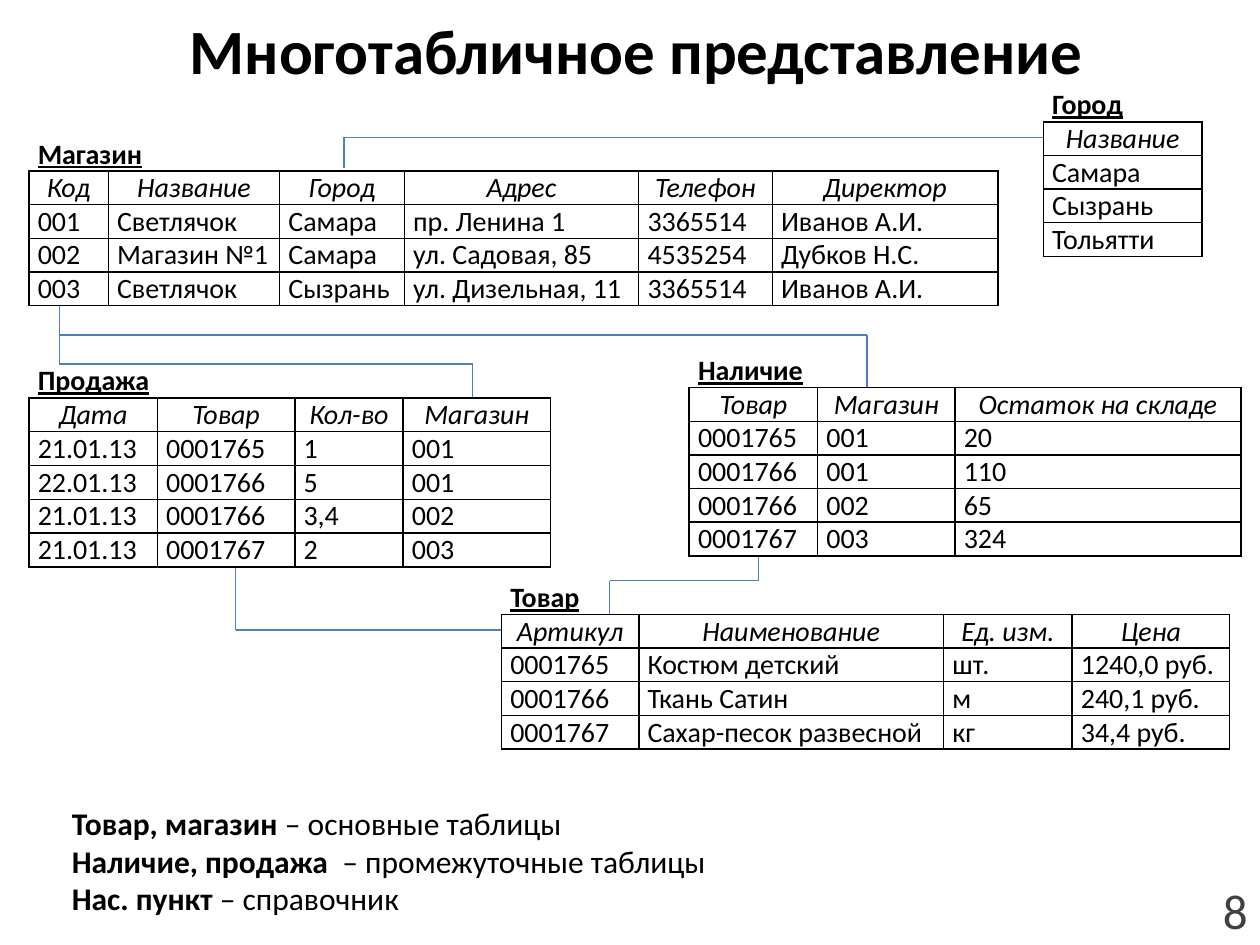
"""Build a slide that shows how the tables of a shop database are linked."""
from dataclasses import dataclass
from itertools import pairwise

import pptx
import pptx.dml.color
import pptx.enum.shapes
import pptx.enum.text
import pptx.oxml.ns
import pptx.util
from lxml import etree

Inches = pptx.util.Inches
Pt = pptx.util.Pt
Align = pptx.enum.text.PP_ALIGN
AutoSize = pptx.enum.text.MSO_AUTO_SIZE
qualified = pptx.oxml.ns.qn


@dataclass(frozen=True)
class Theme:
    font: str = "Calibri"
    ink: str = "000000"
    paper: str = "FFFFFF"
    number: str = "404040"
    link: str = "4F81BD"
    link_dark: str = "4B7EBC"
    title_size: int = 36
    number_size: int = 28
    body_size: int = 18
    table_size: int = 16
    border_width: float = 1
    link_width: float = 0.75


@dataclass(frozen=True)
class DataTable:
    name: str
    left: float
    top: float
    height: float
    widths: tuple[float, ...]
    rows: tuple[tuple[str, ...], ...]
    title_span: int
    alignment: Align = Align.JUSTIFY


@dataclass(frozen=True)
class Link:
    points: tuple[tuple[float, float], ...]
    color: str


THEME = Theme()

LINKS = (
    Link(((0.47, 2.42), (0.47, 2.89), (3.75, 2.89), (3.75, 3.2)), THEME.link),
    Link(((1.87, 4.45), (1.87, 5), (3.98, 5)), THEME.link),
    Link(((2.73, 1.33), (2.73, 1.09), (8.28, 1.09)), THEME.link),
    Link(((4.84, 4.92), (4.84, 4.61), (6.02, 4.61), (6.02, 4.38)), THEME.link_dark),
    Link(((6.88, 3.12), (6.88, 2.66), (0.47, 2.66)), THEME.link_dark),
)

TABLES = (
    DataTable("Товар", 3.98, 4.61, 1.33, (1.09, 2.42, 1.02, 1.25), (
        ("Артикул", "Наименование", "Ед. изм.", "Цена"),
        ("0001765", "Костюм детский", "шт.", "1240,0 руб."),
        ("0001766", "Ткань Сатин", "м", "240,1 руб."),
        ("0001767", "Сахар-песок развесной", "кг", "34,4 руб."),
    ), 4),
    DataTable("Продажа", 0.23, 2.89, 1.61, (1.02, 1.09, 0.86, 1.17), (
        ("Дата", "Товар", "Кол-во", "Магазин"),
        ("21.01.13", "0001765", "1", "001"),
        ("22.01.13", "0001766", "5", "001"),
        ("21.01.13", "0001766", "3,4", "002"),
        ("21.01.13", "0001767", "2", "003"),
    ), 4),
    DataTable("Наличие", 5.47, 2.81, 1.6, (1.02, 1.09, 2.27), (
        ("Товар", "Магазин", "Остаток на складе"),
        ("0001765", "001", "20"),
        ("0001766", "001", "110"),
        ("0001766", "002", "65"),
        ("0001767", "003", "324"),
    ), 2),
    DataTable("Магазин", 0.23, 1.09, 1.33, (0.63, 1.36, 0.99, 1.86, 1.06, 1.79), (
        ("Код", "Название", "Город", "Адрес", "Телефон", "Директор"),
        ("001", "Светлячок", "Самара", "пр. Ленина 1", "3365514", "Иванов А.И."),
        ("002", "Магазин №1", "Самара", "ул. Садовая, 85", "4535254", "Дубков Н.С."),
        ("003", "Светлячок", "Сызрань", "ул. Дизельная, 11", "3365514", "Иванов А.И."),
    ), 6, Align.LEFT),
    DataTable("Город", 8.28, 0.7, 1.33, (1.26,), (
        ("Название",), ("Самара",), ("Сызрань",), ("Тольятти",),
    ), 1),
)

TABLE_ROLES = (
    ("Товар, магазин ", "– основные таблицы"),
    ("Наличие, продажа  ", "– промежуточные таблицы"),
    ("Нас. пункт ", "– справочник"),
)


def rgb(color: str) -> pptx.dml.color.RGBColor:
    """Turn a hex string into a colour."""
    return pptx.dml.color.RGBColor.from_string(color)


def place(shape, left: float, top: float, width: float, height: float) -> None:
    """Move and size a shape, in inches."""
    shape.left, shape.top = Inches(left), Inches(top)
    shape.width, shape.height = Inches(width), Inches(height)


def add_run(paragraph, text: str, size: int, color: str = THEME.ink,
            bold: bool = False, italic: bool = False, underline: bool = False) -> None:
    """Add one formatted run to a paragraph."""
    run = paragraph.add_run()
    run.text = text
    font = run.font
    font.name, font.size = THEME.font, Pt(size)
    font.bold, font.italic, font.underline = bold, italic, underline
    font.color.rgb = rgb(color)


def add_title(slide) -> None:
    """Fill the title placeholder."""
    title = slide.shapes.title
    place(title, 0.55, 0, 9, 0.78)
    paragraph = title.text_frame.paragraphs[0]
    paragraph.alignment = Align.CENTER
    add_run(paragraph, "Многотабличное представление", THEME.title_size, bold=True)


def add_slide_number(slide) -> None:
    """Put the slide number in the bottom right corner."""
    box = slide.shapes.add_textbox(Inches(9.14), Inches(6.95), Inches(0.86), Inches(0.55))
    frame = box.text_frame
    frame.word_wrap = True
    frame.vertical_anchor = pptx.enum.text.MSO_ANCHOR.MIDDLE
    frame.paragraphs[0].alignment = Align.RIGHT
    add_run(frame.paragraphs[0], "8", THEME.number_size, THEME.number)


def add_table_roles(slide) -> None:
    """Fill the body placeholder with the roles of the tables."""
    body = slide.placeholders[1]
    place(body, 0.47, 6.33, 9.06, 1.01)
    frame = body.text_frame
    frame.auto_size = AutoSize.SHAPE_TO_FIT_TEXT
    for index, (names, role) in enumerate(TABLE_ROLES):
        paragraph = frame.add_paragraph() if index else frame.paragraphs[0]
        paragraph.space_before = Pt(0)
        properties = paragraph._p.get_or_add_pPr()
        properties.set("marL", "0")
        properties.set("indent", "0")
        etree.SubElement(properties, qualified("a:buNone"))
        add_run(paragraph, names, THEME.body_size, bold=True)
        add_run(paragraph, role, THEME.body_size)


def add_link(slide, link: Link) -> None:
    """Draw a link as straight segments between its points."""
    for start, end in pairwise(link.points):
        connector = slide.shapes.add_connector(
            pptx.enum.shapes.MSO_CONNECTOR.STRAIGHT, *map(Inches, start + end))
        connector.line.color.rgb = rgb(link.color)
        connector.line.width = Pt(THEME.link_width)
        etree.SubElement(connector._element.spPr, qualified("a:effectLst"))


def set_borders(cell, visible: str) -> None:
    """Draw the named sides of a cell and clear the others."""
    properties = cell._tc.get_or_add_tcPr()
    for side in "LRTB":
        line = etree.SubElement(properties, qualified(f"a:ln{side}"),
                                w=str(Pt(THEME.border_width)))
        if side in visible:
            fill = etree.SubElement(line, qualified("a:solidFill"))
            etree.SubElement(fill, qualified("a:srgbClr"), val=THEME.ink)
        else:
            etree.SubElement(line, qualified("a:noFill"))


def format_cell(cell, is_title: bool) -> None:
    """Set the margins, borders and fill of a cell."""
    cell.margin_left = cell.margin_right = Inches(0.07)
    cell.margin_top = cell.margin_bottom = 0
    set_borders(cell, "B" if is_title else "LRTB")
    if is_title:
        cell.fill.background()
        ending = cell.text_frame.paragraphs[0]._p.get_or_add_endParaRPr()
        ending.set("sz", str(THEME.table_size * 100))
    else:
        cell.fill.solid()
        cell.fill.fore_color.rgb = rgb(THEME.paper)


def add_data_table(slide, data: DataTable) -> None:
    """Draw a table with its name, header and records."""
    row_count = len(data.rows) + 1
    table = slide.shapes.add_table(
        row_count, len(data.widths), Inches(data.left), Inches(data.top),
        Inches(sum(data.widths)), Inches(data.height)).table
    table.first_row = table.horz_banding = False
    for column, width in zip(table.columns, data.widths):
        column.width = Inches(width)
    for row_index, row in enumerate(table.rows):
        row.height = Inches(data.height / row_count)
        for cell in row.cells:
            format_cell(cell, row_index == 0)
    name_cell = table.cell(0, 0)
    if data.title_span > 1:
        name_cell.merge(table.cell(0, data.title_span - 1))
    paragraph = name_cell.text_frame.paragraphs[0]
    paragraph.alignment = Align.JUSTIFY
    add_run(paragraph, data.name, THEME.table_size, bold=True, underline=True)
    for row_index, values in enumerate(data.rows, 1):
        is_header = row_index == 1
        for column_index, value in enumerate(values):
            paragraph = table.cell(row_index, column_index).text_frame.paragraphs[0]
            paragraph.alignment = Align.CENTER if is_header else data.alignment
            add_run(paragraph, value, THEME.table_size, italic=is_header)


def main() -> None:
    """Build and save the presentation."""
    presentation = pptx.Presentation()
    presentation.slide_width, presentation.slide_height = Inches(10), Inches(7.5)
    slide = presentation.slides.add_slide(presentation.slide_layouts[1])
    add_title(slide)
    add_slide_number(slide)
    for link in LINKS:
        add_link(slide, link)
    add_table_roles(slide)
    for data in TABLES:
        add_data_table(slide, data)
    presentation.save("out.pptx")


if __name__ == "__main__":
    main()
